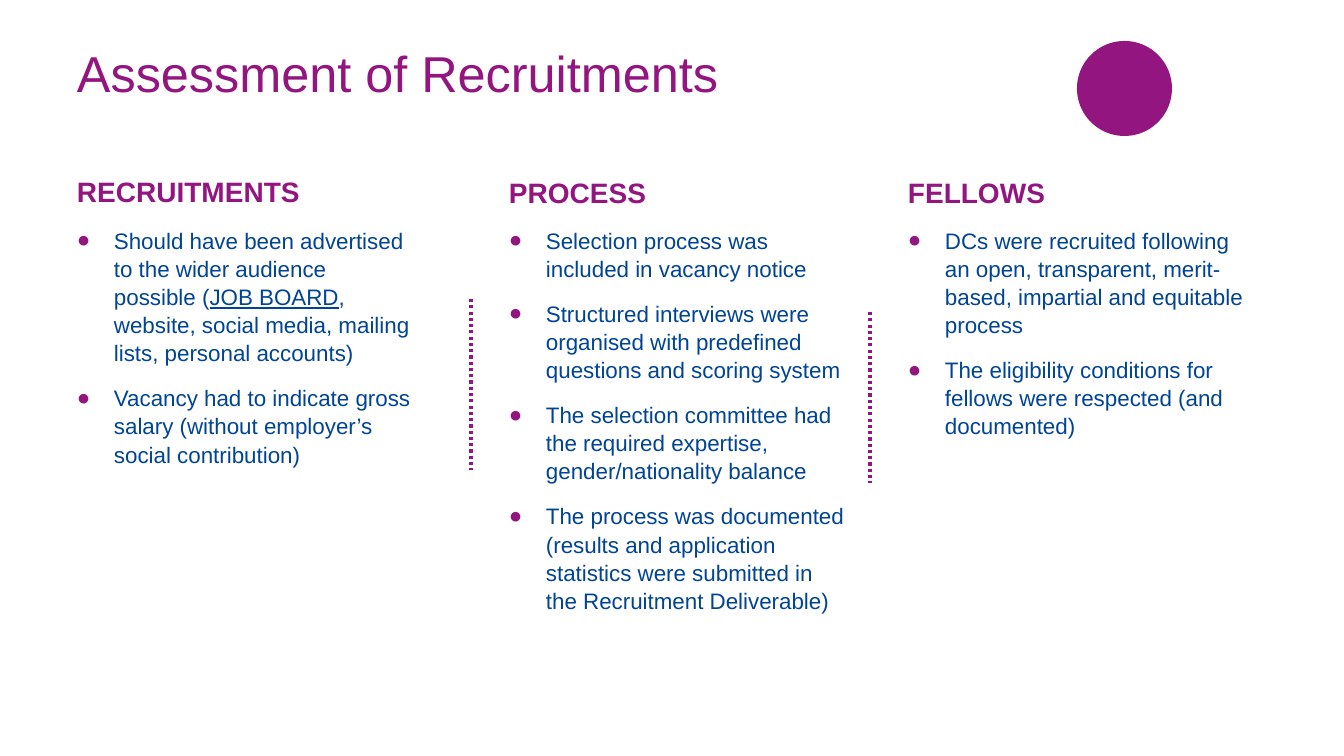
from lxml import etree
from pptx import Presentation
from pptx.dml.color import RGBColor
from pptx.enum.dml import MSO_LINE
from pptx.enum.shapes import MSO_CONNECTOR, MSO_SHAPE
from pptx.enum.text import MSO_ANCHOR, PP_ALIGN
from pptx.oxml.ns import qn
from pptx.util import Pt

EMU_PER_PX = 914400 / 100.8
PURPLE = "931680"
BLUE = "004494"
HEADING = {"size": Pt(20), "bold": True, "color": PURPLE}
BODY = {"size": Pt(16), "bold": False, "color": BLUE}
TITLE = {"size": Pt(36), "bold": False, "color": PURPLE}
COLUMN_TOP, COLUMN_WIDTH = 170, 357

# Each column: left, height, heading, bullets; a bullet is a list of (text, underlined).
COLUMNS = [
    (67, 362, "RECRUITMENTS", [
        [("Should have been advertised to the wider audience possible (", False),
         ("JOB BOARD", True),
         (", website, social media, mailing lists, personal accounts)", False)],
        [("Vacancy had to indicate gross salary (without employer’s social contribution)", False)],
    ]),
    (499, 351, "PROCESS", [
        [("Selection process was included in vacancy notice", False)],
        [("Structured interviews were organised with predefined questions and scoring system", False)],
        [("The selection committee had the required expertise, gender/nationality balance", False)],
        [("The process was documented (results and application statistics were "
          "submitted in the Recruitment Deliverable)", False)],
    ]),
    (898, 335, "FELLOWS", [
        [("DCs were recruited following an open, transparent, merit-based, "
          "impartial and equitable process", False)],
        [("The eligibility conditions for fellows were respected (and documented)", False)],
    ]),
]
DIVIDERS = [(471, 299), (870, 312)]
DIVIDER_HEIGHT = 171


def px(length):
    return round(length * EMU_PER_PX)


def rgb(value):
    return RGBColor.from_string(value)


class SlideBuilder:
    font_name = "Arial"
    bullet_indent = 37

    def __init__(self, slide):
        self.slide = slide

    def text_box(self, left, top, width, height, bottom_inset=5, anchor=MSO_ANCHOR.TOP):
        shape = self.slide.shapes.add_textbox(px(left), px(top), px(width), px(height))
        frame = shape.text_frame
        settings = {
            "word_wrap": True, "vertical_anchor": anchor,
            "margin_left": px(10), "margin_right": px(10),
            "margin_top": px(5), "margin_bottom": px(bottom_inset),
        }
        for name, value in settings.items():
            setattr(frame, name, value)
        return frame

    def run(self, paragraph, text, style, underline=False):
        run = paragraph.add_run()
        run.text = text
        settings = {"name": self.font_name, "size": style["size"],
                    "bold": style["bold"], "underline": underline}
        for name, value in settings.items():
            setattr(run.font, name, value)
        run.font.color.rgb = rgb(style["color"])

    def bullet(self, frame, parts):
        paragraph = frame.add_paragraph()
        properties = paragraph._p.get_or_add_pPr()
        properties.set("marL", str(px(self.bullet_indent)))
        properties.set("indent", str(-px(self.bullet_indent)))
        color = etree.SubElement(properties, qn("a:buClr"))
        etree.SubElement(color, qn("a:srgbClr"), val=PURPLE)
        etree.SubElement(properties, qn("a:buFont"), typeface=self.font_name)
        etree.SubElement(properties, qn("a:buChar"), char="●")
        paragraph.alignment = PP_ALIGN.LEFT
        paragraph.space_before = Pt(12)
        paragraph.line_spacing = 1.05
        for text, underline in parts:
            self.run(paragraph, text, BODY, underline)

    def column(self, left, height, heading, bullets):
        frame = self.text_box(left, COLUMN_TOP, COLUMN_WIDTH, height)
        self.run(frame.paragraphs[0], heading, HEADING)
        for parts in bullets:
            self.bullet(frame, parts)

    def title(self, text):
        frame = self.text_box(67, 41, 1159, 62, bottom_inset=0, anchor=MSO_ANCHOR.BOTTOM)
        frame.paragraphs[0].line_spacing = 0.9
        self.run(frame.paragraphs[0], text, TITLE)

    def divider(self, x, top):
        line = self.slide.shapes.add_connector(
            MSO_CONNECTOR.STRAIGHT, px(x), px(top), px(x), px(top + DIVIDER_HEIGHT))
        line.line.width = Pt(2.25)
        line.line.color.rgb = rgb(PURPLE)
        line.line.dash_style = MSO_LINE.ROUND_DOT
        properties = line._element.spPr
        dash = properties.find(".//" + qn("a:prstDash"))
        dash.set("val", "sysDot")
        etree.SubElement(properties, qn("a:effectLst"))

    def circle(self, left, top, diameter):
        shape = self.slide.shapes.add_shape(
            MSO_SHAPE.OVAL, px(left), px(top), px(diameter), px(diameter))
        shape.shadow.inherit = False
        shape.fill.solid()
        shape.fill.fore_color.rgb = rgb(PURPLE)
        shape.line.fill.background()


def main():
    presentation = Presentation()
    presentation.slide_width = px(1344)
    presentation.slide_height = px(756)
    builder = SlideBuilder(presentation.slides.add_slide(presentation.slide_layouts[6]))
    for column in COLUMNS:
        builder.column(*column)
    for x, top in DIVIDERS:
        builder.divider(x, top)
    builder.title("Assessment of Recruitments")
    builder.circle(1077, 41, 95)
    presentation.save("out.pptx")


if __name__ == "__main__":
    main()
